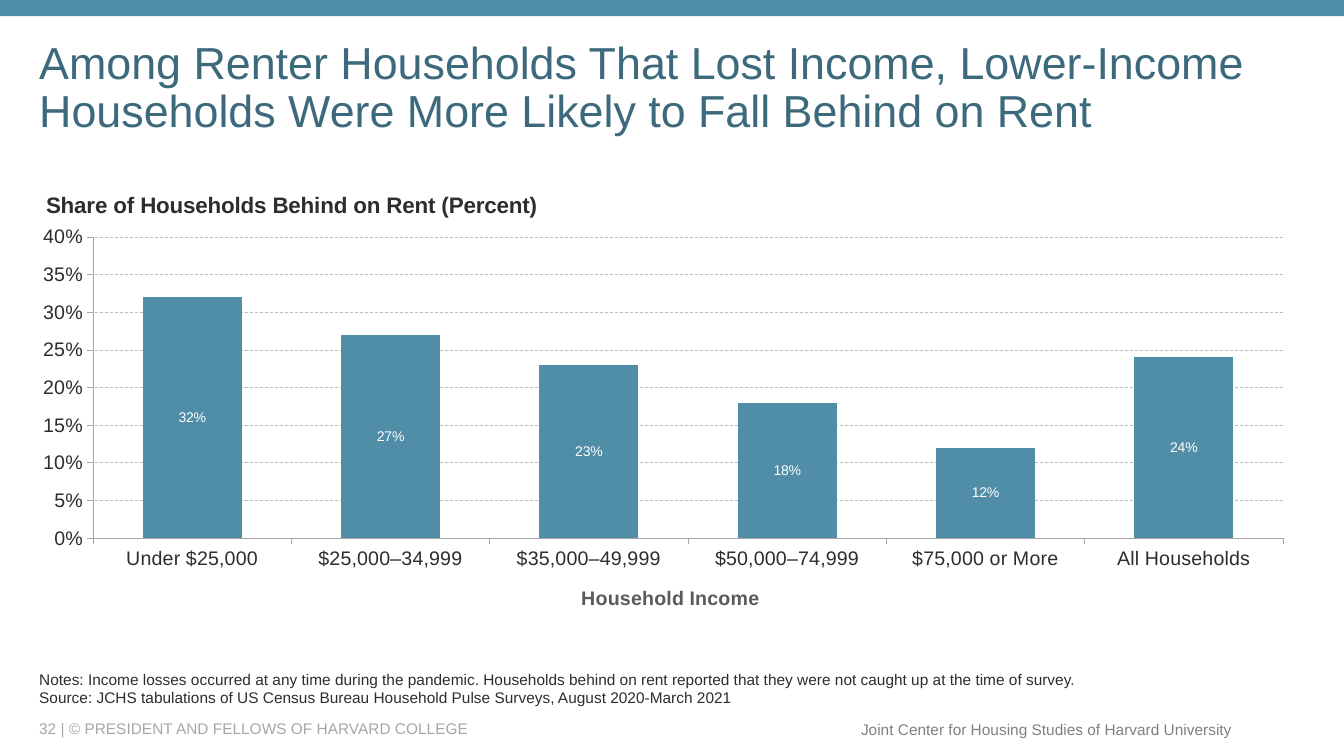
from lxml import etree
from pptx import Presentation
from pptx.chart.data import CategoryChartData
from pptx.dml.color import RGBColor
from pptx.enum.chart import XL_CHART_TYPE, XL_LABEL_POSITION, XL_TICK_MARK
from pptx.enum.dml import MSO_LINE
from pptx.enum.shapes import MSO_SHAPE
from pptx.enum.text import MSO_ANCHOR, PP_ALIGN
from pptx.oxml.ns import qn
from pptx.util import Inches, Pt

COLUMNS = XL_CHART_TYPE.COLUMN_CLUSTERED
CENTER = XL_LABEL_POSITION.CENTER
OUTSIDE = XL_TICK_MARK.OUTSIDE
DASH = MSO_LINE.DASH
RECTANGLE = MSO_SHAPE.RECTANGLE
MIDDLE, BOTTOM = MSO_ANCHOR.MIDDLE, MSO_ANCHOR.BOTTOM
LEFT, RIGHT = PP_ALIGN.LEFT, PP_ALIGN.RIGHT

FONT = "Arial"
COLORS = {
    "teal": "508DA6", "title": "3C6A7C", "text": "2D2D2D", "label": "5A5A5A",
    "copyright": "A6A6A6", "center": "808080", "axis": "A6A6A6",
    "grid": "BDBDBD", "white": "FFFFFF",
}
MARGIN = 0.29


def add_text(text, left, top, width, height, size, color,
             align=LEFT, anchor=MIDDLE, spacing=None, wrap=True):
    box = slide.shapes.add_textbox(Inches(left), Inches(top), Inches(width), Inches(height))
    frame = box.text_frame
    frame.word_wrap = wrap
    frame.vertical_anchor = anchor
    frame.text = text
    for paragraph in frame.paragraphs:
        paragraph.alignment = align
        paragraph.line_spacing = spacing
        paragraph.font.name = FONT
        paragraph.font.size = Pt(size)
        paragraph.font.color.rgb = RGBColor.from_string(COLORS[color])


def set_layout(element, **settings):
    """Place a chart part by fractions of the chart area."""
    layout = element.find(qn("c:layout"))
    if layout is None:
        layout = etree.Element(qn("c:layout"))
        element.insert(0, layout)
    manual = etree.SubElement(layout, qn("c:manualLayout"))
    for name, value in settings.items():
        etree.SubElement(manual, qn(f"c:{name}")).set("val", str(value))


presentation = Presentation()
presentation.slide_width = Inches(13.33)
presentation.slide_height = Inches(7.5)
slide = presentation.slides.add_slide(presentation.slide_layouts[6])

# Top band
band = slide.shapes.add_shape(RECTANGLE, 0, 0, presentation.slide_width, Inches(0.16))
band.shadow.inherit = False
band.fill.solid()
band.fill.fore_color.rgb = RGBColor.from_string(COLORS["teal"])
band.line.fill.background()

# Title, notes and footer
add_text("Among Renter Households That Lost Income, Lower-Income Households "
         "Were More Likely to Fall Behind on Rent",
         MARGIN, 0.4, 12.65, 0.97, size=32, color="title", spacing=0.9)
add_text("Notes: Income losses occurred at any time during the pandemic. Households behind "
         "on rent reported that they were not caught up at the time of survey.\n"
         "Source: JCHS tabulations of US Census Bureau Household Pulse Surveys, "
         "August 2020-March 2021",
         MARGIN, 6.48, 11.75, 0.58, size=11, color="text", anchor=BOTTOM)
add_text("32 | © PRESIDENT AND FELLOWS OF HARVARD COLLEGE",
         MARGIN, 7.13, 7.92, 0.2, size=11, color="copyright")
add_text("Joint Center for Housing Studies of Harvard University",
         8.42, 7.09, 3.9, 0.29, size=11, color="center", align=RIGHT, wrap=False)

# Chart data
chart_data = CategoryChartData(number_format="0%")
chart_data.categories = ["Under $25,000", "$25,000–34,999", "$35,000–49,999",
                         "$50,000–74,999", "$75,000 or More", "All Households"]
chart_data.add_series("Series 1", [0.32, 0.27, 0.23, 0.18, 0.12, 0.24])
chart = slide.shapes.add_chart(COLUMNS, Inches(MARGIN), Inches(1.72), Inches(12.65),
                               Inches(4.6), chart_data).chart
chart.has_legend = False
chart.font.name = FONT
chart.font.size = Pt(10)
chart.font.color.rgb = RGBColor.from_string(COLORS["label"])
set_layout(chart.plots[0]._element.getparent(), layoutTarget="inner", xMode="edge",
           yMode="edge", x=0.05, y=0.137, w=0.933, h=0.65)

# Axes
category_axis, value_axis = chart.category_axis, chart.value_axis
for axis in (category_axis, value_axis):
    axis.major_tick_mark = OUTSIDE
    axis.format.line.width = Pt(0.5)
    axis.format.line.color.rgb = RGBColor.from_string(COLORS["axis"])
    axis.tick_labels.font.name = FONT
    axis.tick_labels.font.size = Pt(14)
    axis.tick_labels.font.color.rgb = RGBColor.from_string(COLORS["text"])
value_axis.minimum_scale = 0
value_axis.maximum_scale = 0.4
value_axis.major_unit = 0.05
value_axis.tick_labels.number_format = "0%"
value_axis.tick_labels.number_format_is_linked = False
grid_line = value_axis.major_gridlines.format.line
grid_line.width = Pt(0.5)
grid_line.color.rgb = RGBColor.from_string(COLORS["grid"])
grid_line.dash_style = DASH

# Chart and axis titles
for title, text, size, color, x, y in (
    (chart.chart_title, "Share of Households Behind on Rent (Percent)", 16, "text", 0.01, 0.03),
    (category_axis.axis_title, "Household Income", 14, "label", 0.43, 0.88),
):
    title.text_frame.text = text
    font = title.text_frame.paragraphs[0].runs[0].font
    font.name = FONT
    font.size = Pt(size)
    font.bold = True
    font.color.rgb = RGBColor.from_string(COLORS[color])
    set_layout(title._element, xMode="edge", yMode="edge", x=x, y=y)

# Columns and their labels
plot = chart.plots[0]
plot.gap_width = 100
plot.vary_by_categories = False
series = plot.series[0]
series.format.fill.solid()
series.format.fill.fore_color.rgb = RGBColor.from_string(COLORS["teal"])
labels = series.data_labels
labels.show_value = True
labels.position = CENTER
labels.number_format = "0%"
labels.number_format_is_linked = False
labels.font.name = FONT
labels.font.size = Pt(10)
labels.font.color.rgb = RGBColor.from_string(COLORS["white"])

presentation.save("out.pptx")
